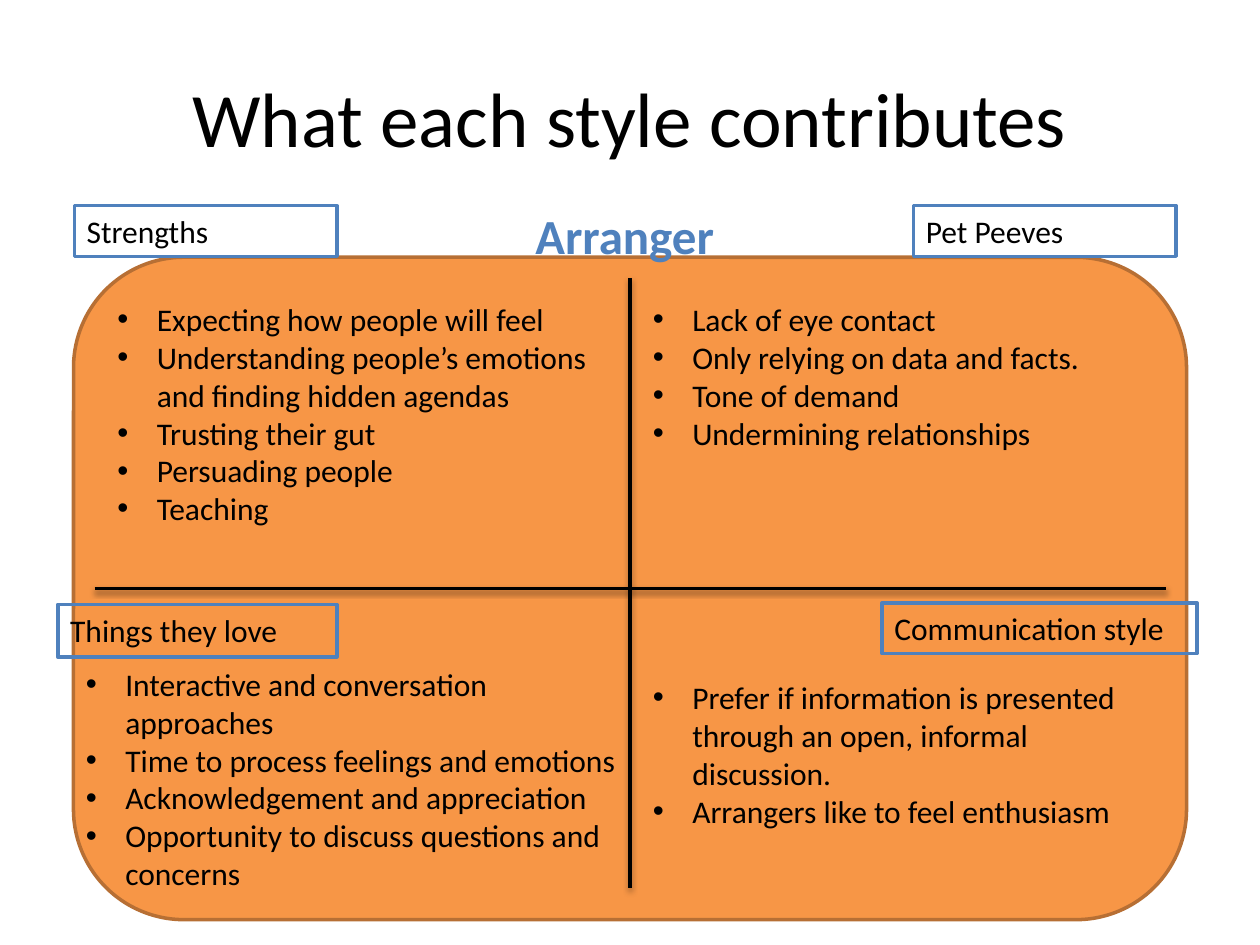
from dataclasses import dataclass

from lxml import etree
from pptx import Presentation
from pptx.dml.color import RGBColor
from pptx.enum.shapes import MSO_CONNECTOR, MSO_SHAPE
from pptx.enum.text import MSO_ANCHOR, MSO_AUTO_SIZE, PP_ALIGN
from pptx.oxml.ns import qn
from pptx.util import Pt

LEFT, CENTER = PP_ALIGN.LEFT, PP_ALIGN.CENTER
TOP, MIDDLE = MSO_ANCHOR.TOP, MSO_ANCHOR.MIDDLE
FIT = MSO_AUTO_SIZE.SHAPE_TO_FIT_TEXT
RECT, ROUNDED = MSO_SHAPE.RECTANGLE, MSO_SHAPE.ROUNDED_RECTANGLE
STRAIGHT = MSO_CONNECTOR.STRAIGHT


@dataclass(frozen=True)
class Theme:
    font: str = "Calibri"
    ink: str = "000000"
    paper: str = "FFFFFF"
    accent: str = "4F81BD"
    panel: str = "F79646"
    panel_edge: str = "B76F34"
    title: int = 44
    heading: int = 28
    body: int = 18
    line: int = 2
    indent: float = 22.5


THEME = Theme()

QUADRANTS = [
    ("Strengths", (42.5, 117.5, 150, 29), THEME.paper, (60, 168, 294, 138), [
        "Expecting how people will feel",
        "Understanding people’s emotions and finding hidden agendas",
        "Trusting their gut",
        "Persuading people",
        "Teaching",
    ]),
    ("Pet Peeves", (522, 117.5, 150, 29), THEME.paper, (366, 168, 282, 94.5), [
        "Lack of eye contact",
        "Only relying on data and facts.",
        "Tone of demand",
        "Undermining relationships",
    ]),
    ("Things they love", (33, 345.5, 159.5, 30), None, (42, 376.5, 318, 160), [
        "Interactive and conversation approaches",
        "Time to process feelings and emotions",
        "Acknowledgement and appreciation",
        "Opportunity to discuss questions and concerns",
    ]),
    ("Communication style", (504, 344.5, 180, 29), None, (366, 384, 306, 94.5), [
        "Prefer if information is presented through an open, informal discussion.",
        "Arrangers like to feel enthusiasm",
    ]),
]


def rgb(value):
    return RGBColor.from_string(value)


def points(box):
    return [Pt(v) for v in box]


def style_text(sp, size, color=THEME.ink, bold=False, align=LEFT, anchor=TOP):
    tf = sp.text_frame
    tf.word_wrap = True
    tf.vertical_anchor = anchor
    for p in tf.paragraphs:
        p.alignment = align
        for r in p.runs:
            r.font.name = THEME.font
            r.font.size = Pt(size)
            r.font.bold = bold
            r.font.color.rgb = rgb(color)


def add_heading(s, box, text, size, **style):
    sp = s.shapes.add_textbox(*points(box))
    sp.text_frame.text = text
    style_text(sp, size, align=CENTER, **style)


def add_block(s, kind, box, fill, line):
    sp = s.shapes.add_shape(kind, *points(box))
    sp.shadow.inherit = False
    if fill:
        sp.fill.solid()
        sp.fill.fore_color.rgb = rgb(fill)
    else:
        sp.fill.background()
    sp.line.color.rgb = rgb(line)
    sp.line.width = Pt(THEME.line)
    return sp


def add_label(s, box, text, fill):
    sp = add_block(s, RECT, box, fill, THEME.accent)
    sp.text_frame.text = text
    style_text(sp, THEME.body)


def add_bullets(s, box, items):
    sp = s.shapes.add_textbox(*points(box))
    tf = sp.text_frame
    tf.text = "\n".join(items)
    for p in tf.paragraphs:
        pPr = p._p.get_or_add_pPr()
        pPr.set("marL", str(Pt(THEME.indent)))
        pPr.set("indent", str(-Pt(THEME.indent)))
        etree.SubElement(pPr, qn("a:buFont"), typeface="Arial")
        etree.SubElement(pPr, qn("a:buChar"), char="•")
    style_text(sp, THEME.body)
    tf.auto_size = FIT


def add_axis(s, x1, y1, x2, y2):
    cx = s.shapes.add_connector(STRAIGHT, *points((x1, y1, x2, y2)))
    cx.line.color.rgb = rgb(THEME.ink)
    cx.line.width = Pt(THEME.line)
    effects = etree.SubElement(cx._element.spPr, qn("a:effectLst"))
    shadow = etree.SubElement(
        effects, qn("a:outerShdw"), blurRad=str(Pt(3.1)), dist=str(Pt(1.6)),
        dir="5400000", rotWithShape="0")
    color = etree.SubElement(shadow, qn("a:srgbClr"), val=THEME.ink)
    etree.SubElement(color, qn("a:alpha"), val="38000")


def add_matrix(s, box):
    x, y, w, h = box
    add_block(s, ROUNDED, box, THEME.panel, THEME.panel_edge)
    add_axis(s, x + w / 2, y + 12, x + w / 2, y + h - 18)
    add_axis(s, x + 12, y + h / 2, x + w - 12, y + h / 2)
    for label, label_box, fill, list_box, items in QUADRANTS:
        add_label(s, label_box, label, fill)
        add_bullets(s, list_box, items)


def main():
    prs = Presentation()
    prs.slide_width, prs.slide_height = Pt(720), Pt(540)
    s = prs.slides.add_slide(prs.slide_layouts[6])
    add_heading(s, (36, 21.6, 648, 90), "What each style contributes",
                THEME.title, anchor=MIDDLE)
    add_matrix(s, (42, 147, 636, 378.5))
    add_heading(s, (192, 114, 330, 41), "Arranger", THEME.heading,
                color=THEME.accent, bold=True)
    prs.save("out.pptx")


if __name__ == "__main__":
    main()
